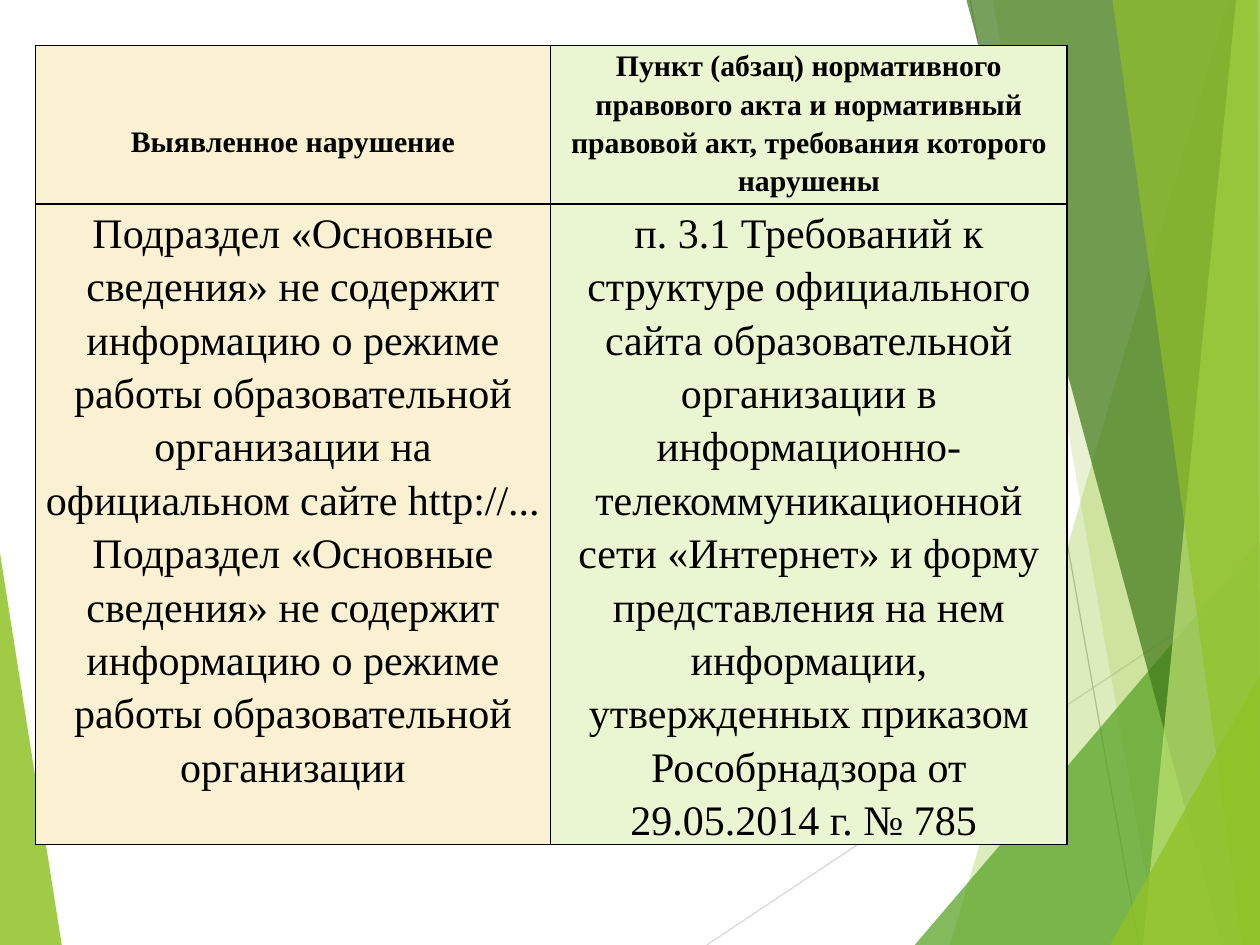
from lxml.etree import SubElement
from pptx import Presentation
from pptx.dml.color import RGBColor
from pptx.enum.shapes import MSO_CONNECTOR
from pptx.enum.text import PP_ALIGN
from pptx.oxml.ns import qn
from pptx.util import Inches, Pt

FONT = "Times New Roman"
FACETS_BEHIND = [
    ([(0, 4.39), (0.49, 7.5), (0, 7.5)], "90C226", 85),
]
RAYS = [
    ((5.61, 7.5), (10.01, 4.57), "D9D9D9"),
    ((7.7, 0), (9.04, 7.5), "BFBFBF"),
]
FACETS_FRONT = [
    ([(9.75, 0), (7.54, 7.5), (10, 7.5), (10, 0)], "90C226", 30),
    ([(7.88, 0), (9.19, 7.5), (10, 7.5), (10, 0)], "90C226", 20),
    ([(7.26, 7.5), (10, 4.29), (10, 7.5)], "54A021", 72),
    ([(7.67, 0), (9.7, 7.5), (10, 7.5), (10, 0)], "3F7819", 70),
    ([(9.81, 0), (9.07, 7.5), (10, 7.5), (10, 0)], "C0E474", 70),
    ([(8.83, 0), (9.86, 7.5), (10, 7.5), (9.98, 0)], "90C226", 65),
    ([(8.81, 7.5), (10, 5.35), (10, 7.5)], "90C226", 80),
]
COLUMN_WIDTHS = [4.09, 4.1]
COLUMN_FILLS = ["FAF1D2", "EAF6D1"]
ROW_HEIGHTS = [1.26, 4.39]
HEADER = [
    "Выявленное нарушение",
    "Пункт (абзац) нормативного правового акта и нормативный правовой акт, "
    "требования которого нарушены",
]
BODY = [
    "Подраздел «Основные сведения» не содержит информацию о режиме работы "
    "образовательной организации на официальном сайте http://... "
    "Подраздел «Основные сведения» не содержит информацию о режиме работы "
    "образовательной организации",
    "п. 3.1 Требований к структуре официального сайта образовательной "
    "организации в информационно-телекоммуникационной сети «Интернет» и форму "
    "представления на нем информации, утвержденных приказом Рособрнадзора "
    "от 29.05.2014 г. № 785 ",
]


def color(value):
    """Return the colour of a hex string."""
    return RGBColor.from_string(value)


def add_facet(page, points, fill, opacity):
    """Draw a translucent polygon of the background."""
    corners = [(Inches(x), Inches(y)) for x, y in points]
    builder = page.shapes.build_freeform(*corners[0], scale=1.0)
    builder.add_line_segments(corners[1:], close=True)
    facet = builder.convert_to_shape()
    facet.shadow.inherit = False
    facet.line.fill.background()
    facet.fill.solid()
    facet.fill.fore_color.rgb = color(fill)
    solid = facet.element.spPr.find(qn("a:solidFill"))
    SubElement(solid[0], qn("a:alpha"), val=str(opacity * 1000))


def add_ray(page, start, end, stroke):
    """Draw a thin line of the background."""
    ends = [Inches(length) for length in (*start, *end)]
    ray = page.shapes.add_connector(MSO_CONNECTOR.STRAIGHT, *ends)
    ray.line.color.rgb = color(stroke)
    ray.line.width = Pt(0.75)
    SubElement(ray.element.spPr, qn("a:effectLst"))


def add_borders(cell):
    """Put a black one-point border on every side of a cell."""
    properties = cell._tc.get_or_add_tcPr()
    for index, side in enumerate(("lnL", "lnR", "lnT", "lnB")):
        border = properties.makeelement(qn(f"a:{side}"), {"w": str(Pt(1))})
        solid = SubElement(border, qn("a:solidFill"))
        SubElement(solid, qn("a:srgbClr"), val="000000")
        properties.insert(index, border)


def fill_cell(cell, text, fill, size, bold):
    """Write and format one table cell."""
    cell.margin_left = cell.margin_right = Inches(0.05)
    cell.margin_top = cell.margin_bottom = 0
    cell.fill.solid()
    cell.fill.fore_color.rgb = color(fill)
    add_borders(cell)
    cell.text = text
    para = cell.text_frame.paragraphs[0]
    para.alignment = PP_ALIGN.CENTER
    para.line_spacing = 1.15
    para.font.name = FONT
    para.font.size = Pt(size)
    para.font.bold = bold
    para.font.color.rgb = color("000000")


def add_violation_table(page):
    """Add the table of violations and the rules they break."""
    frame = page.shapes.add_table(
        2, 2, Inches(0.28), Inches(0.36),
        Inches(sum(COLUMN_WIDTHS)), Inches(sum(ROW_HEIGHTS)))
    table = frame.table
    table.horz_banding = False
    for column, width in zip(table.columns, COLUMN_WIDTHS):
        column.width = Inches(width)
    for row, height in zip(table.rows, ROW_HEIGHTS):
        row.height = Inches(height)
    for row, texts, size, bold in zip(table.rows, (HEADER, BODY), (17, 24), (True, False)):
        for cell, text, fill in zip(row.cells, texts, COLUMN_FILLS):
            fill_cell(cell, text, fill, size, bold)
    table.cell(0, 0).margin_top = Inches(0.6)


def main():
    """Build the slide and save the deck."""
    deck = Presentation()
    deck.slide_width, deck.slide_height = Inches(10), Inches(7.5)
    page = deck.slides.add_slide(deck.slide_layouts[6])
    for facet in FACETS_BEHIND:
        add_facet(page, *facet)
    for ray in RAYS:
        add_ray(page, *ray)
    for facet in FACETS_FRONT:
        add_facet(page, *facet)
    add_violation_table(page)
    deck.save("out.pptx")


if __name__ == "__main__":
    main()
